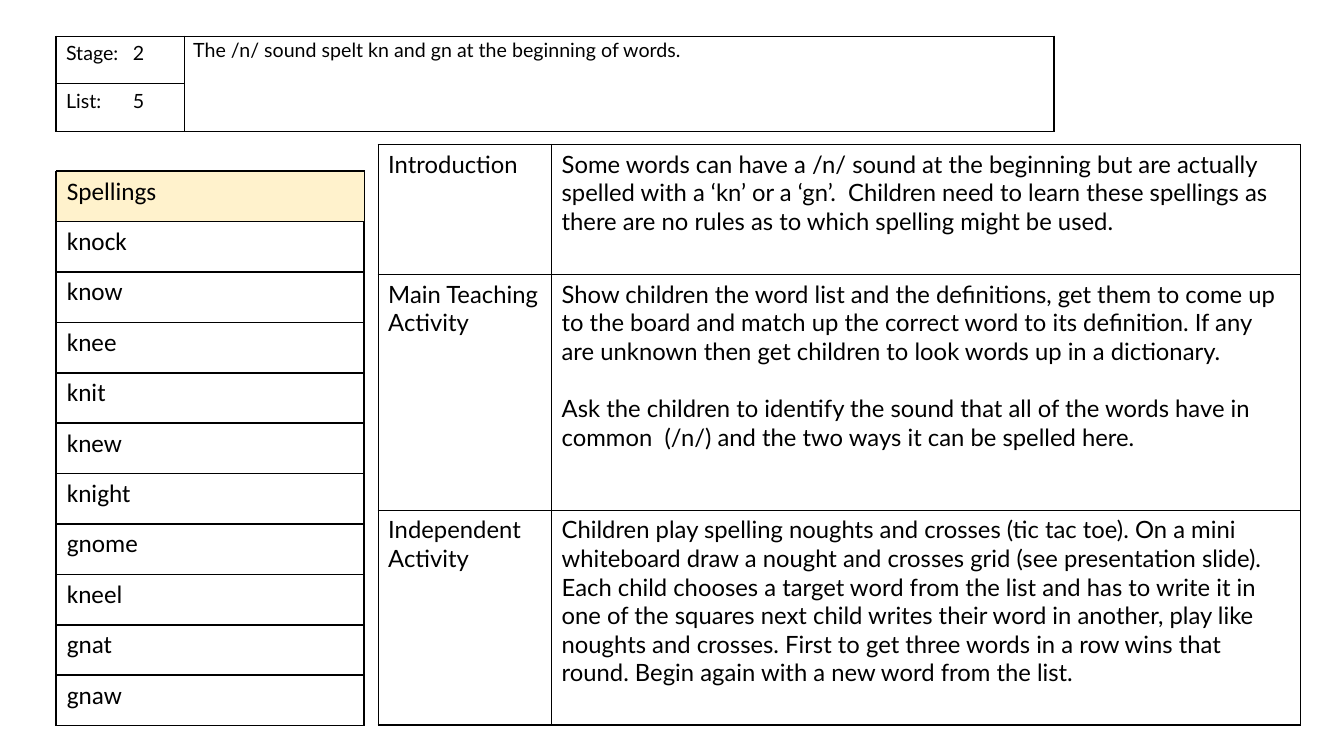
from lxml import etree
from pptx import Presentation
from pptx.dml.color import RGBColor
from pptx.oxml.ns import qn
from pptx.util import Cm, Pt

COLORS = {"ink": "000000", "heading": "FFF2CC"}
INK = RGBColor.from_string(COLORS["ink"])


def write(tf, content, size, font):
    """Fill a text frame with one paragraph per line of content."""
    tf.text = content
    for p in tf.paragraphs:
        p.font.size = Pt(size)
        p.font.name = font
        p.font.color.rgb = INK


def add_grid(left, top, widths, heights, content, size, font):
    """Add an unfilled table with thin borders; content is a list of rows."""
    table = s.shapes.add_table(
        len(heights), len(widths), Cm(left), Cm(top),
        Cm(sum(widths)), Cm(sum(heights))).table
    table.first_row = table.horz_banding = False
    for column, width in zip(table.columns, widths):
        column.width = Cm(width)
    for row, height, texts in zip(table.rows, heights, content):
        row.height = Cm(height)
        for cell, words in zip(row.cells, texts):
            write(cell.text_frame, words, size, font)
            tcPr = cell._tc.get_or_add_tcPr()
            for side in ("lnL", "lnR", "lnT", "lnB"):
                ln = etree.SubElement(tcPr, qn(f"a:{side}"), w=str(Pt(1)))
                line_fill = etree.SubElement(ln, qn("a:solidFill"))
                etree.SubElement(line_fill, qn("a:srgbClr"), val=COLORS["ink"])
            cell.fill.background()
    return table


prs = Presentation()
prs.slide_width, prs.slide_height = Cm(33.87), Cm(19.05)
s = prs.slides.add_slide(prs.slide_layouts[6])

# Stage, list and objective
header = add_grid(1.41, 0.91, [3.23, 21.92], [1.2, 1.2],
                  [["Stage:", ""], ["List:", ""]], 14, "Lato")
header.cell(0, 1).merge(header.cell(1, 1))

header_texts = [
    ("2", 3.1, 0.97, 1.2, 1.02),
    ("5", 3.1, 2.18, 1.2, 1.02),
    ("The /n/ sound spelt kn and gn at the beginning of words.",
     4.62, 0.91, 21.95, 2.41),
]
for words, left, top, width, height in header_texts:
    tf = s.shapes.add_textbox(Cm(left), Cm(top), Cm(width), Cm(height)).text_frame
    tf.word_wrap = True
    write(tf, words, 14, "Lato")
    tf.paragraphs[0].line_spacing = 0.9

# Lesson plan
lesson = [
    ["Introduction",
     "Some words can have a /n/ sound at the beginning but are actually "
     "spelled with a ‘kn’ or a ‘gn’.  Children need to learn these spellings "
     "as there are no rules as to which spelling might be used."],
    ["Main Teaching Activity",
     "Show children the word list and the definitions, get them to come up "
     "to the board and match up the correct word to its definition. If any "
     "are unknown then get children to look words up in a dictionary.\n"
     "Ask the children to identify the sound that all of the words have in "
     "common  (/n/) and the two ways it can be spelled here."],
    ["Independent Activity",
     "Children play spelling noughts and crosses (tic tac toe). On a mini "
     "whiteboard draw a nought and crosses grid (see presentation slide). "
     "Each child chooses a target word from the list and has to write it in "
     "one of the squares next child writes their word in another, play like "
     "noughts and crosses. First to get three words in a row wins that "
     "round. Begin again with a new word from the list."],
]
plan = add_grid(9.53, 3.64, [4.37, 18.87], [3.28, 5.94, 5.41],
                lesson, 17, "Lato")
plan.cell(1, 1).text_frame.paragraphs[1].space_before = Pt(20.4)

# Word list: a ruled frame, with the words in a second grid set just beside it
words = ["Spellings", "knock", "know", "knee", "knit", "knew", "knight",
         "gnome", "kneel", "gnat", "gnaw"]
frame_rows = [[""] for word in words]
word_rows = [[word] for word in words]
for left, top, rows in ((1.41, 4.32, frame_rows), (1.43, 4.31, word_rows)):
    spellings = add_grid(left, top, [7.75], [1.27] * len(words),
                         rows, 18, "Calibri")
heading = spellings.cell(0, 0)
heading.fill.solid()
heading.fill.fore_color.rgb = RGBColor.from_string(COLORS["heading"])

prs.save("out.pptx")
